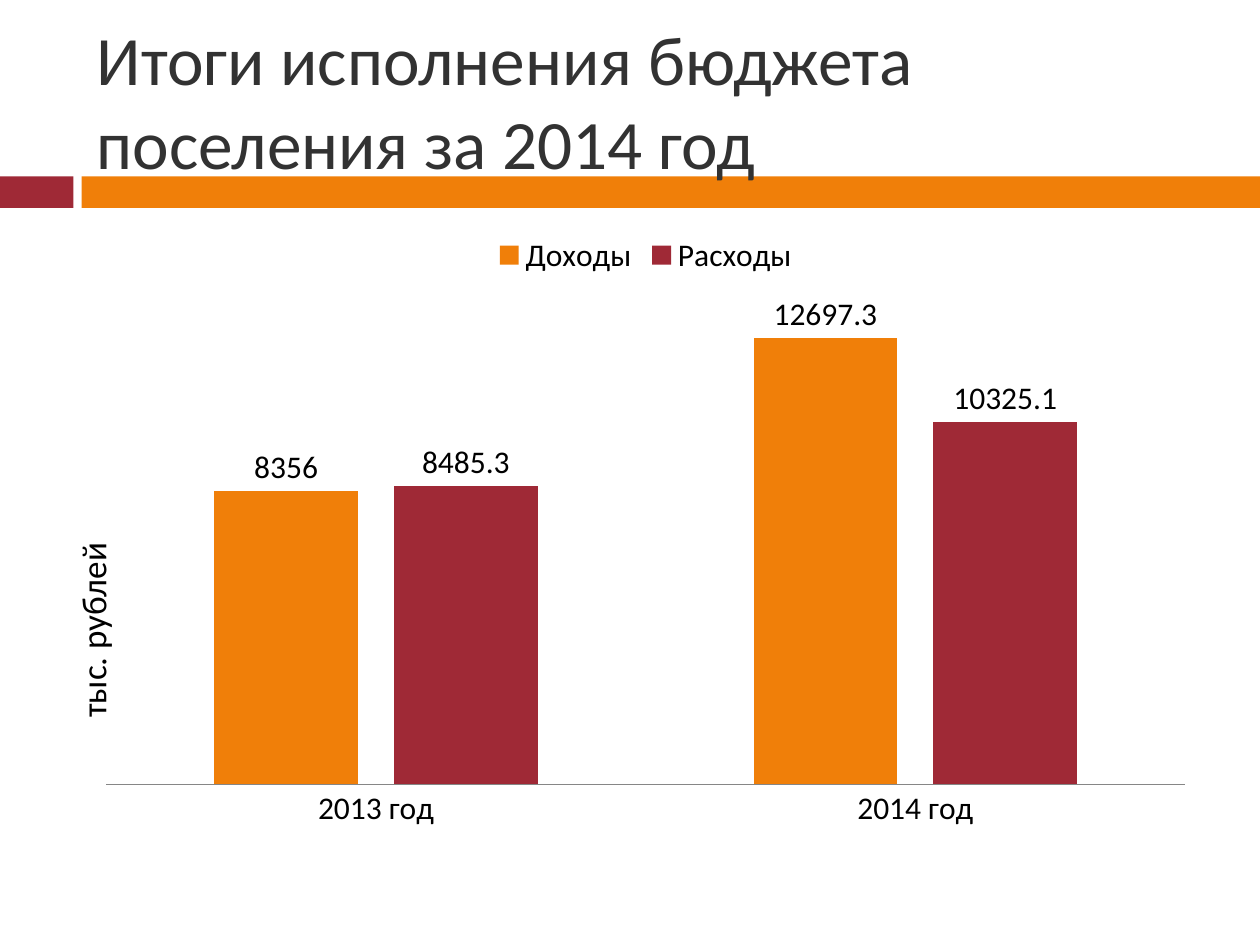
from pptx import Presentation
from pptx.chart.data import CategoryChartData
from pptx.dml.color import RGBColor
from pptx.enum.chart import XL_CHART_TYPE, XL_LABEL_POSITION, XL_LEGEND_POSITION, XL_TICK_MARK
from pptx.enum.shapes import MSO_SHAPE
from pptx.enum.text import MSO_ANCHOR, MSO_AUTO_SIZE, PP_ALIGN
from pptx.util import Pt

RECTANGLE = MSO_SHAPE.RECTANGLE
COLUMNS = XL_CHART_TYPE.COLUMN_CLUSTERED
OUTSIDE_END = XL_LABEL_POSITION.OUTSIDE_END
LEGEND_TOP = XL_LEGEND_POSITION.TOP
NO_TICK = XL_TICK_MARK.NONE
MIDDLE = MSO_ANCHOR.MIDDLE
GROW = MSO_AUTO_SIZE.SHAPE_TO_FIT_TEXT
LEFT = PP_ALIGN.LEFT

FONT = "Calibri"
COLORS = {"orange": "F07F09", "red": "9F2936", "title": "323232",
          "text": "000000", "axis": "868686"}
YEARS = ["2013 год", "2014 год"]
SERIES = [("Доходы", [8356, 12697.3], "orange"),
          ("Расходы", [8485.3, 10325.1], "red")]


def color(name):
    """Return the named palette colour."""
    return RGBColor.from_string(COLORS[name])


def style_font(font, size, name):
    """Set the typeface, size and colour of a font."""
    font.name = FONT
    font.size = Pt(size)
    font.bold = False
    font.color.rgb = color(name)


def add_span(para, text, size, name):
    """Add one left-aligned formatted run to a paragraph."""
    para.alignment = LEFT
    span = para.add_run()
    span.text = text
    style_font(span.font, size, name)


def place(shape, box):
    """Move and size a shape to a box in points."""
    shape.left, shape.top, shape.width, shape.height = map(Pt, box)


def add_title(page, box, text):
    """Fill the title placeholder within the box."""
    title = page.shapes.title
    place(title, box)
    frame = title.text_frame
    frame.word_wrap = True
    frame.vertical_anchor = MIDDLE
    add_span(frame.paragraphs[0], text, 39.6, "title")


def add_band(page, box, split, gap):
    """Draw the two-part band behind the title, split at a given width."""
    left, top, width, height = box
    start = split + gap
    parts = [(left, split, "red"), (left + start, width - start, "orange")]
    for part_left, part_width, name in parts:
        bar = page.shapes.add_shape(
            RECTANGLE, *map(Pt, (part_left, top, part_width, height)))
        bar.shadow.inherit = False
        bar.fill.solid()
        bar.fill.fore_color.rgb = color(name)
        bar.line.fill.background()
        page.shapes.title.element.addprevious(bar.element)


def add_budget_chart(page, box):
    """Add the column chart of income and spending by year."""
    data = CategoryChartData(number_format="General")
    data.categories = YEARS
    for name, values, _ in SERIES:
        data.add_series(name, values)
    chart = page.shapes.add_chart(COLUMNS, *map(Pt, box), data).chart
    style_font(chart.font, 18, "text")
    chart.has_title = False
    chart.has_legend = True
    chart.legend.position = LEGEND_TOP
    chart.legend.include_in_layout = False

    chart.value_axis.visible = False
    chart.value_axis.has_major_gridlines = False
    chart.value_axis.minimum_scale = 0
    chart.value_axis.maximum_scale = 14000
    chart.category_axis.major_tick_mark = NO_TICK
    chart.category_axis.format.line.color.rgb = color("axis")

    plot = chart.plots[0]
    plot.vary_by_categories = False
    plot.gap_width = 150
    plot.overlap = -25
    plot.has_data_labels = True
    plot.data_labels.show_value = True
    plot.data_labels.position = OUTSIDE_END
    for series, (_, _, name) in zip(plot.series, SERIES):
        series.format.fill.solid()
        series.format.fill.fore_color.rgb = color(name)


def add_unit_label(page, box, text):
    """Add the unit label, turned to read upwards."""
    label = page.shapes.add_textbox(*map(Pt, box))
    label.rotation = 270
    frame = label.text_frame
    frame.word_wrap = True
    frame.auto_size = GROW
    add_span(frame.paragraphs[0], text, 20, "text")


def main():
    """Build the budget slide and save the deck."""
    deck = Presentation()
    deck.slide_width, deck.slide_height = Pt(720), Pt(540)
    page = deck.slides.add_slide(deck.slide_layouts[5])
    add_title(page, (48, 18, 642, 78), "Итоги исполнения бюджета поселения за 2014 год")
    add_band(page, (0, 100.8, 720, 18), 42, 4.6)
    add_budget_chart(page, (48, 126, 642, 354))
    add_unit_label(page, (-18, 330.5, 142, 31.5), "тыс. рублей")
    deck.save("out.pptx")


if __name__ == "__main__":
    main()
